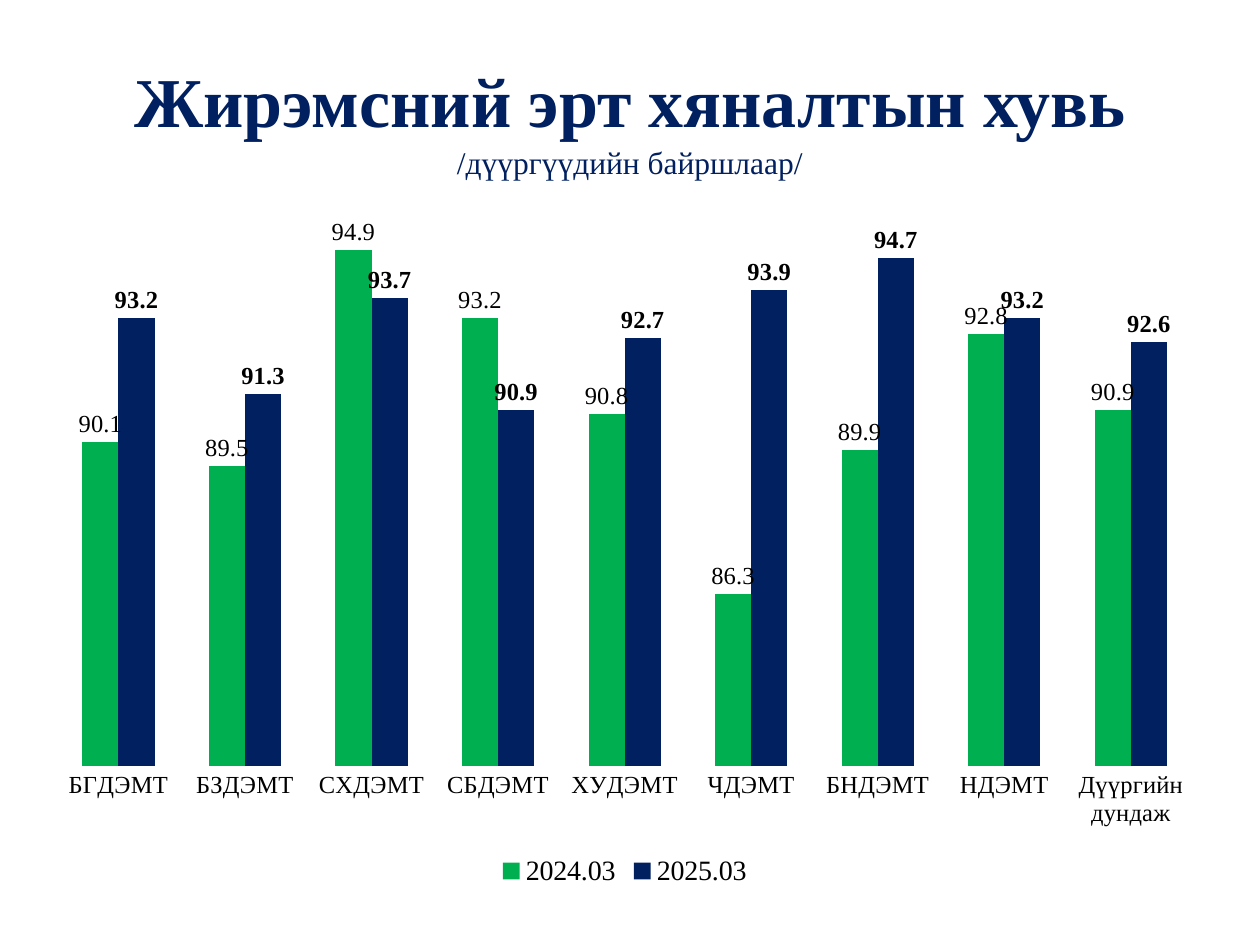
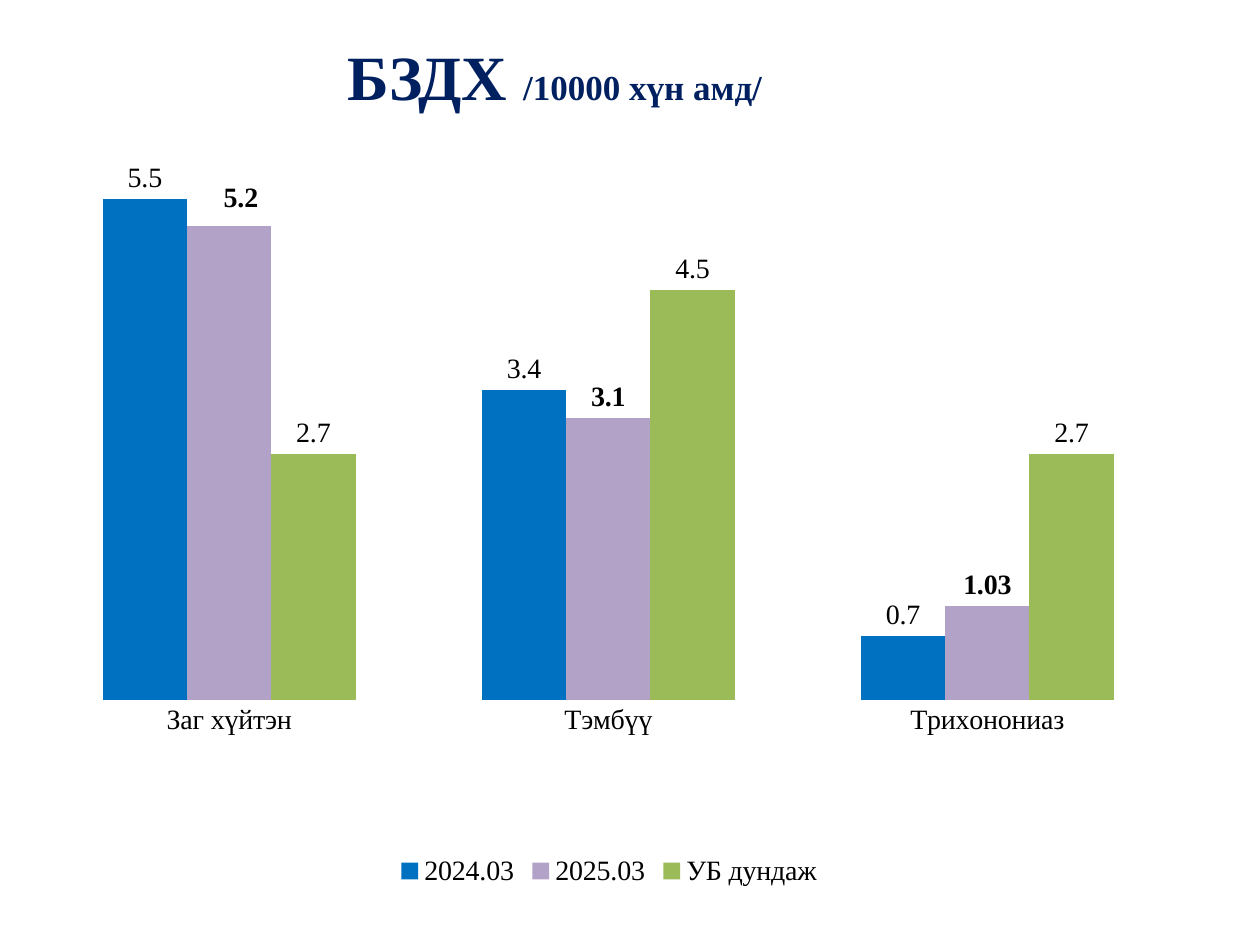
from dataclasses import dataclass

from lxml import etree
from pptx import Presentation
from pptx.chart.data import CategoryChartData
from pptx.dml.color import RGBColor
from pptx.enum.chart import XL_CHART_TYPE, XL_LABEL_POSITION, XL_LEGEND_POSITION, XL_TICK_MARK
from pptx.enum.text import MSO_ANCHOR, PP_ALIGN
from pptx.oxml.ns import qn
from pptx.util import Pt

COLUMNS = XL_CHART_TYPE.COLUMN_CLUSTERED
OUTSIDE = XL_LABEL_POSITION.OUTSIDE_END
BOTTOM = XL_LEGEND_POSITION.BOTTOM
NO_TICK = XL_TICK_MARK.NONE
MIDDLE = MSO_ANCHOR.MIDDLE
CENTER = PP_ALIGN.CENTER


@dataclass(frozen=True)
class Theme:
    font: str = "Times New Roman"
    navy: str = "002060"
    black: str = "000000"
    green: str = "00B050"
    blue: str = "0070C0"
    lilac: str = "B3A2C7"
    olive: str = "9BBB59"
    legend_size: int = 16
    gap_width: int = 150


T = Theme()

# Content: boxes are left, top, width, height in points;
# title runs are text, size, bold; series are name, colour, bold labels, values
SLIDES = [
    dict(
        title=[("Жирэмсний эрт хяналтын хувь", 40, True), (" ", 44, False),
               ("/дүүргүүдийн байршлаар/", 18, False)],
        title_box=(36, 12, 648, 108),
        title_insets=(7.2, 3.6),
        chart_box=(18, 110, 678, 400),
        plot=(0.02, 0.02, 0.96, 0.8),
        scale=(82, 96),
        size=14,
        categories=["БГДЭМТ", "БЗДЭМТ", "СХДЭМТ", "СБДЭМТ", "ХУДЭМТ",
                    "ЧДЭМТ", "БНДЭМТ", "НДЭМТ", "Дүүргийн дундаж"],
        series=[
            ("2024.03", T.green, False,
             (90.1, 89.5, 94.9, 93.2, 90.8, 86.3, 89.9, 92.8, 90.9)),
            ("2025.03", T.navy, True,
             (93.2, 91.3, 93.7, 90.9, 92.7, 93.9, 94.7, 93.2, 92.6)),
        ],
        moved_labels=[],
    ),
    dict(
        title=[("БЗДХ ", 36, True), ("/10000 хүн амд/", 20, True)],
        title_box=(36, 10, 648, 86),
        title_insets=(93, 24),
        chart_box=(12, 72, 672, 438),
        plot=(0.016, 0.036, 0.967, 0.713),
        scale=(0, 6),
        size=16,
        categories=["Заг хүйтэн", "Тэмбүү", "Трихонониаз"],
        series=[
            ("2024.03", T.blue, False, (5.5, 3.4, 0.7)),
            ("2025.03", T.lilac, True, (5.2, 3.1, 1.03)),
            ("УБ дундаж", T.olive, False, (2.7, 4.5, 2.7)),
        ],
        moved_labels=[(1, 0, 0.01, -0.01)],  # series, point, dx, dy
    ),
]


def style_font(font, size, color=T.black, bold=False):
    font.name = T.font
    font.size = Pt(size)
    font.bold = bold
    font.color.rgb = RGBColor.from_string(color)


def set_layout(parent, index, **values):
    """Give a chart part a manual layout, as fractions of the chart."""
    for old in parent.findall(qn("c:layout")):
        parent.remove(old)
    layout = etree.Element(qn("c:layout"))
    manual = etree.SubElement(layout, qn("c:manualLayout"))
    for tag, value in values.items():
        etree.SubElement(manual, qn(f"c:{tag}")).set("val", str(value))
    parent.insert(index, layout)


def add_title(s, content):
    tf = s.shapes.add_textbox(*map(Pt, content["title_box"])).text_frame
    tf.word_wrap = True
    tf.vertical_anchor = MIDDLE
    tf.margin_right, tf.margin_bottom = map(Pt, content["title_insets"])
    p = tf.paragraphs[0]
    p.alignment = CENTER
    for text, size, bold in content["title"]:
        r = p.add_run()
        r.text = text
        style_font(r.font, size, T.navy, bold)


def add_column_chart(s, content):
    size = content["size"]
    data = CategoryChartData()
    data.categories = content["categories"]
    for name, _, _, values in content["series"]:
        data.add_series(name, values)
    chart = s.shapes.add_chart(COLUMNS, *map(Pt, content["chart_box"]), data).chart
    chart.has_title = False
    style_font(chart.font, size)

    # Legend and axes
    chart.has_legend = True
    chart.legend.position = BOTTOM
    chart.legend.include_in_layout = False
    style_font(chart.legend.font, T.legend_size)
    axis = chart.category_axis
    axis.major_tick_mark = axis.minor_tick_mark = NO_TICK
    axis.format.line.fill.background()
    style_font(axis.tick_labels.font, size)
    axis = chart.value_axis
    axis.minimum_scale, axis.maximum_scale = content["scale"]
    axis.has_major_gridlines = False
    axis.visible = False

    # Columns and their labels
    plot = chart.plots[0]
    plot.gap_width = T.gap_width
    plot.overlap = 0
    plot.vary_by_categories = False
    for series, (_, color, bold, _) in zip(plot.series, content["series"]):
        series.invert_if_negative = False
        series.format.fill.solid()
        series.format.fill.fore_color.rgb = RGBColor.from_string(color)
        labels = series.data_labels
        labels.show_value = True
        labels.position = OUTSIDE
        style_font(labels.font, size, bold=bold)

    for series_no, point_no, dx, dy in content["moved_labels"]:
        series = plot.series[series_no]
        label = series.points[point_no].data_label
        style_font(label.font, size, bold=content["series"][series_no][2])
        label.position = OUTSIDE
        for idx in series.data_labels._element.iter(qn("c:idx")):
            if idx.get("val") == str(point_no):
                set_layout(idx.getparent(), 1, x=dx, y=dy)

    # Plot area
    x, y, w, h = content["plot"]
    area = chart._chartSpace.find(f".//{qn('c:plotArea')}")
    set_layout(area, 0, layoutTarget="inner", xMode="edge", yMode="edge",
               x=x, y=y, w=w, h=h)


def main():
    prs = Presentation()
    prs.slide_width, prs.slide_height = Pt(720), Pt(540)
    for content in SLIDES:
        s = prs.slides.add_slide(prs.slide_layouts[6])
        add_title(s, content)
        add_column_chart(s, content)
    prs.save("out.pptx")


if __name__ == "__main__":
    main()
